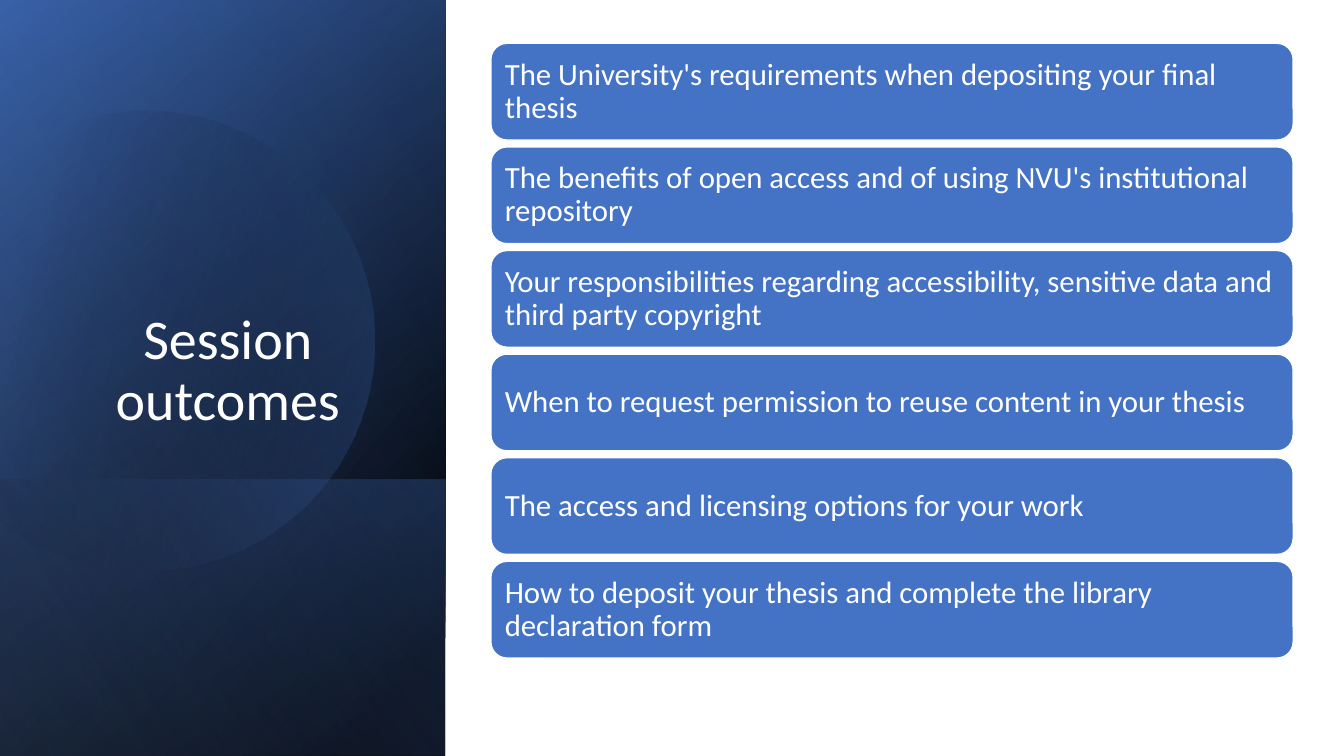
import math
from dataclasses import dataclass

import pptx
import pptx.dml.color
import pptx.enum.shapes
import pptx.enum.text
import pptx.oxml
import pptx.oxml.ns
import pptx.util

Pt = pptx.util.Pt
qn = pptx.oxml.ns.qn
SHAPE = pptx.enum.shapes.MSO_SHAPE
ANCHOR = pptx.enum.text.MSO_ANCHOR
ALIGN = pptx.enum.text.PP_ALIGN

COLORS = {
    "white": "FFFFFF",
    "black": "000000",
    "navy": "2F5597",
    "blue": "4472C4",
    "pale": "8FAADC",
}
FONT = "Calibri"
SLIDE_WIDTH, SLIDE_HEIGHT = 960, 540
PANEL_WIDTH = 318.24


@dataclass
class Stop:
    position: int
    color: str
    opacity: int = 100


@dataclass
class Gradient:
    start: Stop
    end: Stop
    angle: int


@dataclass
class Panel:
    top: float
    gradient: Gradient


BASE_PANELS = [
    Panel(0, Gradient(Stop(8, "black"), Stop(100, "navy"), 50)),
    Panel(0, Gradient(Stop(0, "black", 0), Stop(99, "blue", 46), 30)),
    Panel(342.72, Gradient(Stop(2, "blue", 29), Stop(100, "black", 30), 130)),
]
CIRCLE_GRADIENT = Gradient(Stop(29, "black", 0), Stop(100, "blue", 43), 30)
SHEEN_PANEL = Panel(0, Gradient(Stop(0, "black", 0), Stop(99, "pale", 11), 120))

# Circle cut off at the left: Bezier curves, then straight corners
CIRCLE_CENTER = (114.12, 240.84)
CIRCLE_ROTATION = 343.9
CIRCLE_START = (107.28, 79.2)
CIRCLE_CURVES = [
    ((177.12, 80.64), (241.2, 127.44), (261.36, 198)),
    ((286.56, 285.84), (236.16, 376.56), (149.04, 401.76)),
    ((94.32, 417.6), (38.16, 403.92), (-2.16, 370.08)),
]
CIRCLE_CORNERS = [(-10.8, 362.16), (-10.8, 126), (0, 115.92)]
CIRCLE_CLOSING = [
    ((16.56, 102.24), (36, 92.16), (57.6, 85.68)),
    ((74.16, 81.36), (90.72, 79.2), CIRCLE_START),
]

OUTCOMES = [
    "The University's requirements when depositing your final thesis",
    "The benefits of open access and of using NVU's institutional repository",
    "Your responsibilities regarding accessibility, sensitive data and third party copyright",
    "When to request permission to reuse content in your thesis",
    "The access and licensing options for your work",
    "How to deposit your thesis and complete the library declaration form",
]
OUTCOME_LEFT, OUTCOME_TOP = 350.64, 30.96
OUTCOME_WIDTH, OUTCOME_HEIGHT = 573.12, 69.12
OUTCOME_PITCH = 74


def rgb(name: str) -> pptx.dml.color.RGBColor:
    return pptx.dml.color.RGBColor.from_string(COLORS[name])


def fill_gradient(shape, gradient: Gradient) -> None:
    stops = "".join(
        f'<a:gs pos="{stop.position * 1000}"><a:srgbClr val="{COLORS[stop.color]}">'
        f'<a:alpha val="{stop.opacity * 1000}"/></a:srgbClr></a:gs>'
        for stop in (gradient.start, gradient.end)
    )
    element = pptx.oxml.parse_xml(
        f'<a:gradFill {pptx.oxml.ns.nsdecls("a")} rotWithShape="1">'
        f'<a:gsLst>{stops}</a:gsLst>'
        f'<a:lin ang="{gradient.angle * 60000}" scaled="0"/></a:gradFill>'
    )
    shape.fill.background()
    properties = shape.element.spPr
    properties.replace(properties.find(qn("a:noFill")), element)
    shape.line.fill.background()
    shape.shadow.inherit = False


def add_panel(slide, panel: Panel) -> None:
    """Draw a mirrored rectangle turned a quarter, down to the slide's bottom."""
    length = SLIDE_HEIGHT - panel.top
    left = (PANEL_WIDTH - length) / 2
    top = panel.top + (length - PANEL_WIDTH) / 2
    shape = slide.shapes.add_shape(
        SHAPE.RECTANGLE, Pt(left), Pt(top), Pt(length), Pt(PANEL_WIDTH))
    shape.rotation = 90
    shape.element.spPr.find(qn("a:xfrm")).set("flipH", "1")
    fill_gradient(shape, panel.gradient)


def curve_points(start: tuple, curves: list, steps: int = 20) -> list:
    points = []
    for first, second, end in curves:
        for step in range(1, steps + 1):
            t = step / steps
            u = 1 - t
            points.append(tuple(
                u**3 * a + 3 * u * u * t * b + 3 * u * t * t * c + t**3 * d
                for a, b, c, d in zip(start, first, second, end)))
        start = end
    return points


def before_rotation(point: tuple) -> tuple:
    angle = math.radians(-CIRCLE_ROTATION)
    x, y = point[0] - CIRCLE_CENTER[0], point[1] - CIRCLE_CENTER[1]
    return (
        Pt(CIRCLE_CENTER[0] + x * math.cos(angle) - y * math.sin(angle)),
        Pt(CIRCLE_CENTER[1] + x * math.sin(angle) + y * math.cos(angle)),
    )


def add_circle(slide) -> None:
    outline = [CIRCLE_START, *curve_points(CIRCLE_START, CIRCLE_CURVES),
               *CIRCLE_CORNERS, *curve_points(CIRCLE_CORNERS[-1], CIRCLE_CLOSING)]
    points = [before_rotation(point) for point in outline]
    builder = slide.shapes.build_freeform(*points[0])
    builder.add_line_segments(points[1:], close=True)
    shape = builder.convert_to_shape()
    shape.rotation = CIRCLE_ROTATION
    fill_gradient(shape, CIRCLE_GRADIENT)


def add_text(shape, text: str, size: float, anchor, alignment) -> None:
    frame = shape.text_frame
    frame.word_wrap = True
    frame.vertical_anchor = anchor
    paragraph = frame.paragraphs[0]
    paragraph.alignment = alignment
    paragraph.line_spacing = 0.9
    run = paragraph.add_run()
    run.text = text
    run.font.name = FONT
    run.font.size = Pt(size)
    run.font.color.rgb = rgb("white")


def add_outcome(slide, index: int, text: str) -> None:
    shape = slide.shapes.add_shape(
        SHAPE.ROUNDED_RECTANGLE, Pt(OUTCOME_LEFT), Pt(OUTCOME_TOP + index * OUTCOME_PITCH),
        Pt(OUTCOME_WIDTH), Pt(OUTCOME_HEIGHT))
    shape.shadow.inherit = False
    shape.fill.solid()
    shape.fill.fore_color.rgb = rgb("blue")
    shape.line.color.rgb = rgb("white")
    shape.line.width = Pt(1)
    frame = shape.text_frame
    frame.margin_left = frame.margin_right = Pt(6.6)
    frame.margin_top = frame.margin_bottom = Pt(6.6)
    add_text(shape, text, 22, ANCHOR.MIDDLE, ALIGN.LEFT)


def main() -> None:
    presentation = pptx.Presentation()
    presentation.slide_width = Pt(SLIDE_WIDTH)
    presentation.slide_height = Pt(SLIDE_HEIGHT)
    slide = presentation.slides.add_slide(presentation.slide_layouts[6])
    slide.background.fill.solid()
    slide.background.fill.fore_color.rgb = rgb("white")

    # Shaded side panel
    for panel in BASE_PANELS:
        add_panel(slide, panel)
    add_circle(slide)
    add_panel(slide, SHEEN_PANEL)

    # Title
    title = slide.shapes.add_textbox(Pt(36.72), Pt(46.08), Pt(252), Pt(266.4))
    add_text(title, "Session outcomes", 40, ANCHOR.BOTTOM, ALIGN.CENTER)

    # Outcome list
    for index, text in enumerate(OUTCOMES):
        add_outcome(slide, index, text)

    presentation.save("out.pptx")


if __name__ == "__main__":
    main()
